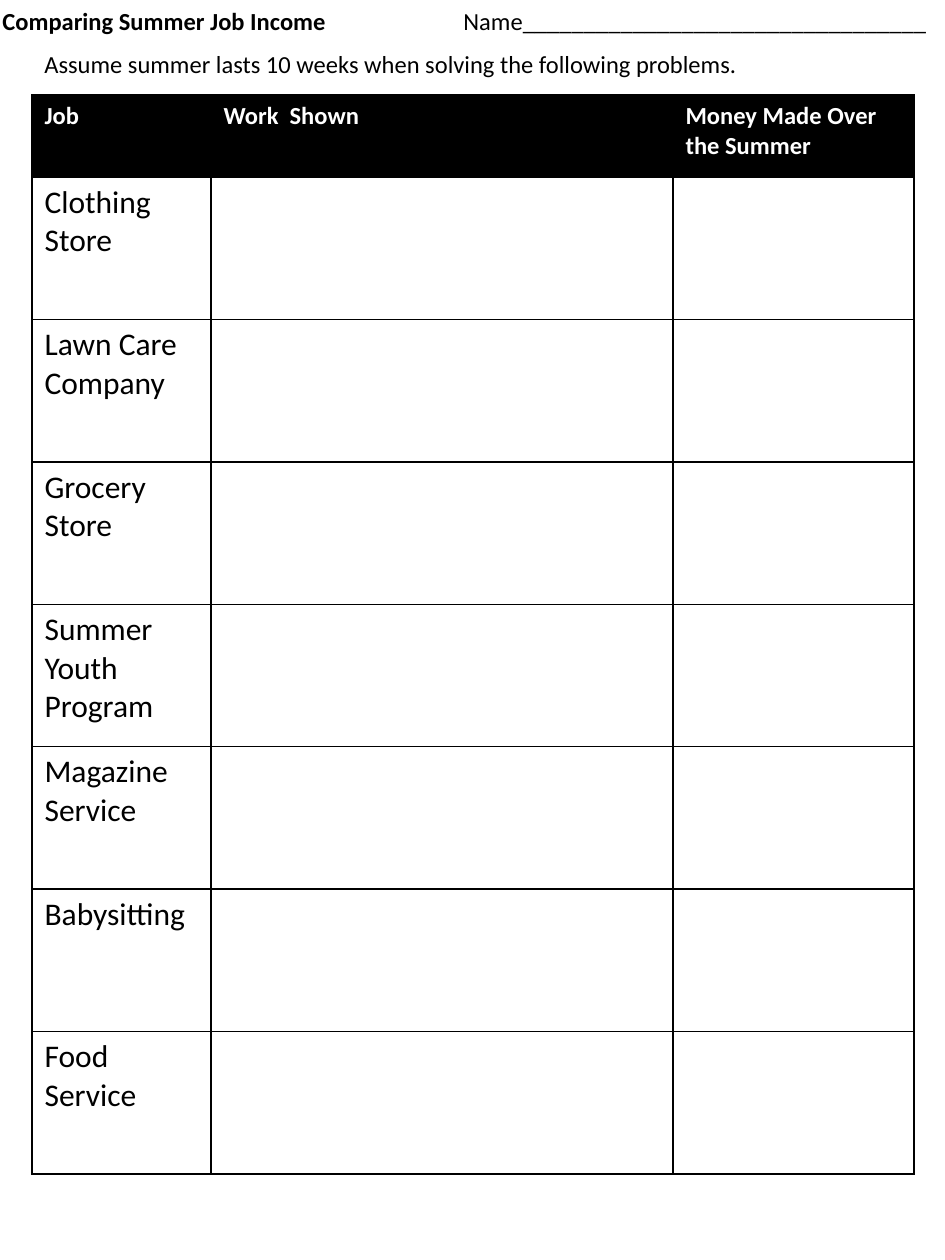
from lxml import etree
from pptx import Presentation
from pptx.dml.color import RGBColor
from pptx.enum.text import MSO_AUTO_SIZE
from pptx.oxml.ns import qn
from pptx.util import Pt

PX_PER_INCH = 126
FONT = "Calibri"
BLACK = RGBColor(0, 0, 0)
WHITE = RGBColor(255, 255, 255)
FIT_SHAPE = MSO_AUTO_SIZE.SHAPE_TO_FIT_TEXT

HEADERS = ["Job", "Work  Shown", "Money Made Over the Summer"]
JOBS = [
    "Clothing Store",
    "Lawn Care Company",
    "Grocery Store",
    "Summer Youth Program",
    "Magazine Service",
    "Babysitting",
    "Food Service",
]
COLUMN_WIDTHS = [179, 462, 241]
HEADER_HEIGHT = 82
BODY_HEIGHT = 997


def px(length):
    return round(length * 914400 / PX_PER_INCH)


def add_span(frame, text, size, color=BLACK, bold=False):
    span = frame.paragraphs[0].add_run()
    span.text = text
    span.font.name = FONT
    span.font.size = Pt(size)
    span.font.bold = bold
    span.font.color.rgb = color


def add_label(page, text, left, top, width, bold=False):
    box = page.shapes.add_textbox(px(left), px(top), px(width), px(43))
    box.text_frame.word_wrap = True
    box.text_frame.auto_size = FIT_SHAPE
    add_span(box.text_frame, text, 14, bold=bold)


def style_cell(cell, fill):
    """Give the cell a solid fill and a thin black border on every side."""
    cell.fill.solid()
    cell.fill.fore_color.rgb = fill
    properties = cell._tc.get_or_add_tcPr()
    for position, side in enumerate(("a:lnL", "a:lnR", "a:lnT", "a:lnB")):
        line = etree.Element(qn(side), w=str(Pt(1)))
        solid = etree.SubElement(line, qn("a:solidFill"))
        etree.SubElement(solid, qn("a:srgbClr"), val=str(BLACK))
        properties.insert(position, line)


def add_job_table(page):
    frame = page.shapes.add_table(
        len(JOBS) + 1, len(HEADERS), px(32), px(95),
        px(sum(COLUMN_WIDTHS)), px(HEADER_HEIGHT + BODY_HEIGHT))
    table = frame.table
    for column, width in zip(table.columns, COLUMN_WIDTHS):
        column.width = px(width)
    for row in table.rows:
        row.height = px(BODY_HEIGHT / len(JOBS))
        for cell in row.cells:
            style_cell(cell, WHITE)
    table.rows[0].height = px(HEADER_HEIGHT)
    for cell, header in zip(table.rows[0].cells, HEADERS):
        cell.fill.fore_color.rgb = BLACK
        add_span(cell.text_frame, header, 14, WHITE, bold=True)
    for index, job in enumerate(JOBS, start=1):
        add_span(table.cell(index, 0).text_frame, job, 18)


def main():
    deck = Presentation()
    deck.slide_width, deck.slide_height = px(945), px(1260)
    page = deck.slides.add_slide(deck.slide_layouts[6])
    add_label(page, "Name" + "_" * 33, 451, 0, 557)
    add_label(page, "Comparing Summer Job Income", -10, 0, 483, bold=True)
    add_job_table(page)
    add_label(
        page,
        "Assume summer lasts 10 weeks when solving the following problems.",
        32, 43, 882)
    deck.save("out.pptx")


if __name__ == "__main__":
    main()
